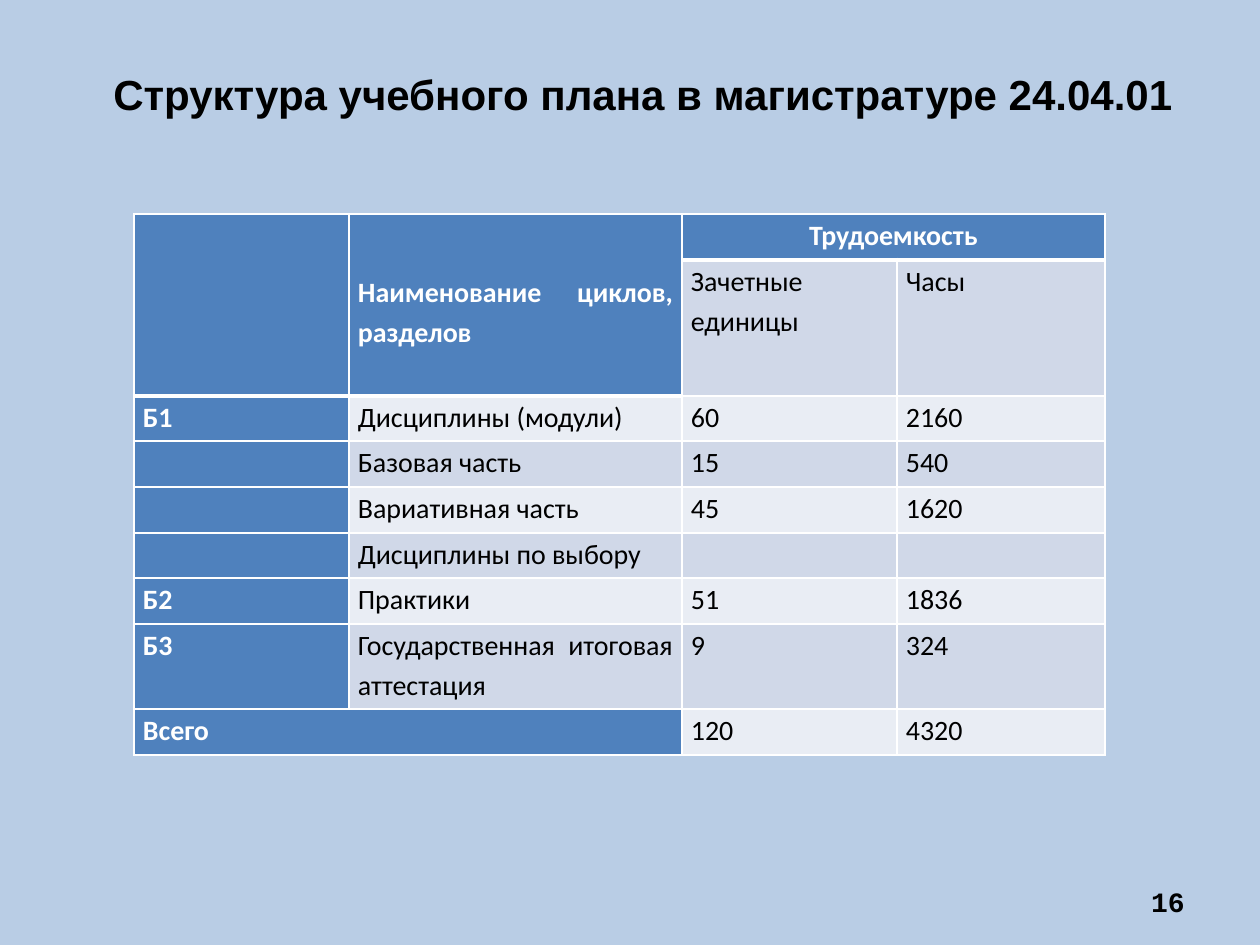
from lxml.etree import SubElement
from pptx import Presentation
from pptx.dml.color import RGBColor
from pptx.enum.text import MSO_ANCHOR, PP_ALIGN
from pptx.oxml.ns import qn
from pptx.util import Emu, Pt

PX = 914400 // 126
COLORS = {
    "background": "B9CDE5",
    "header": "4F81BD",
    "odd": "D0D8E8",
    "even": "E9EDF4",
    "white": "FFFFFF",
    "black": "000000",
}
COLUMNS = [215, 333, 215, 208]
HEIGHTS = [46, 136, 45, 46, 46, 45, 46, 85, 46]
LAST_HEADER_ROW = [1, 1, 0, 0]
ROWS = [
    ["", "Наименование циклов, разделов", "Трудоемкость", ""],
    ["", "", "Зачетные единицы", "Часы"],
    ["Б1", "Дисциплины (модули)", "60", "2160"],
    ["", "Базовая часть", "15", "540"],
    ["", "Вариативная часть", "45", "1620"],
    ["", "Дисциплины по выбору", "", ""],
    ["Б2", "Практики", "51", "1836"],
    ["Б3", "Государственная итоговая аттестация", "9", "324"],
    ["Всего", "", "120", "4320"],
]
MERGES = [((0, 0), (1, 0)), ((0, 1), (1, 1)), ((0, 2), (0, 3)), ((8, 0), (8, 1))]


def px(n):
    return Emu(n * PX)


def rgb(name):
    return RGBColor.from_string(COLORS[name])


def format_paragraph(p, font, size, color, bold, align):
    p.alignment = align
    p.font.name = font
    p.font.size = Pt(size)
    p.font.bold = bold
    p.font.color.rgb = rgb(color)


def set_text(sp, text, box, font, size, align):
    sp.left, sp.top, sp.width, sp.height = map(px, box)
    tf = sp.text_frame
    tf.word_wrap = True
    tf.vertical_anchor = MSO_ANCHOR.MIDDLE
    tf.text = text
    format_paragraph(tf.paragraphs[0], font, size, "black", True, align)


def set_borders(cell, top, bottom):
    tcPr = cell._tc.get_or_add_tcPr()
    for side, width in (("L", 1), ("R", 1), ("T", top), ("B", bottom)):
        ln = SubElement(tcPr, qn(f"a:ln{side}"), w=str(Pt(width)))
        fill = SubElement(ln, qn("a:solidFill"))
        SubElement(fill, qn("a:srgbClr"), val=COLORS["white"])


def format_cell(cell, row, col):
    last = LAST_HEADER_ROW[col]
    is_header = row <= last or col == 0
    set_borders(cell, 3 if row == last + 1 else 1, 3 if row <= last else 1)
    cell.fill.solid()
    cell.fill.fore_color.rgb = rgb("header" if is_header else "odd" if row % 2 else "even")
    cell.margin_left = cell.margin_right = px(9)
    cell.margin_top = cell.margin_bottom = 0
    cell.text = ROWS[row][col]
    p = cell.text_frame.paragraphs[0]
    align = PP_ALIGN.CENTER if (row, col) == (0, 2) else PP_ALIGN.JUSTIFY
    format_paragraph(p, "Calibri", 16, "white" if is_header else "black", is_header, align)
    p.line_spacing = 1.15
    p.space_after = Pt(10)


def add_plan_table(s):
    table = s.shapes.add_table(
        len(ROWS), len(COLUMNS), px(134), px(214), px(sum(COLUMNS)), px(sum(HEIGHTS))
    ).table
    for column, width in zip(table.columns, COLUMNS):
        column.width = px(width)
    for row, height in zip(table.rows, HEIGHTS):
        row.height = px(height)
    for row in range(len(ROWS)):
        for col in range(len(COLUMNS)):
            format_cell(table.cell(row, col), row, col)
    for first, last in MERGES:
        table.cell(*first).merge(table.cell(*last))
    table.cell(0, 1).margin_top = px(57)


def main():
    prs = Presentation()
    prs.slide_width, prs.slide_height = px(1260), px(945)
    s = prs.slides.add_slide(prs.slide_layouts[5])
    s.background.fill.solid()
    s.background.fill.fore_color.rgb = rgb("background")
    set_text(s.shapes.title, "Структура учебного плана в магистратуре 24.04.01",
             (52, 67, 1182, 54), "Arial", 24, PP_ALIGN.CENTER)
    number = s.shapes.add_textbox(0, 0, 0, 0)
    set_text(number, "16", (903, 876, 294, 50), "Courier New", 16, PP_ALIGN.RIGHT)
    add_plan_table(s)
    prs.save("out.pptx")


if __name__ == "__main__":
    main()
